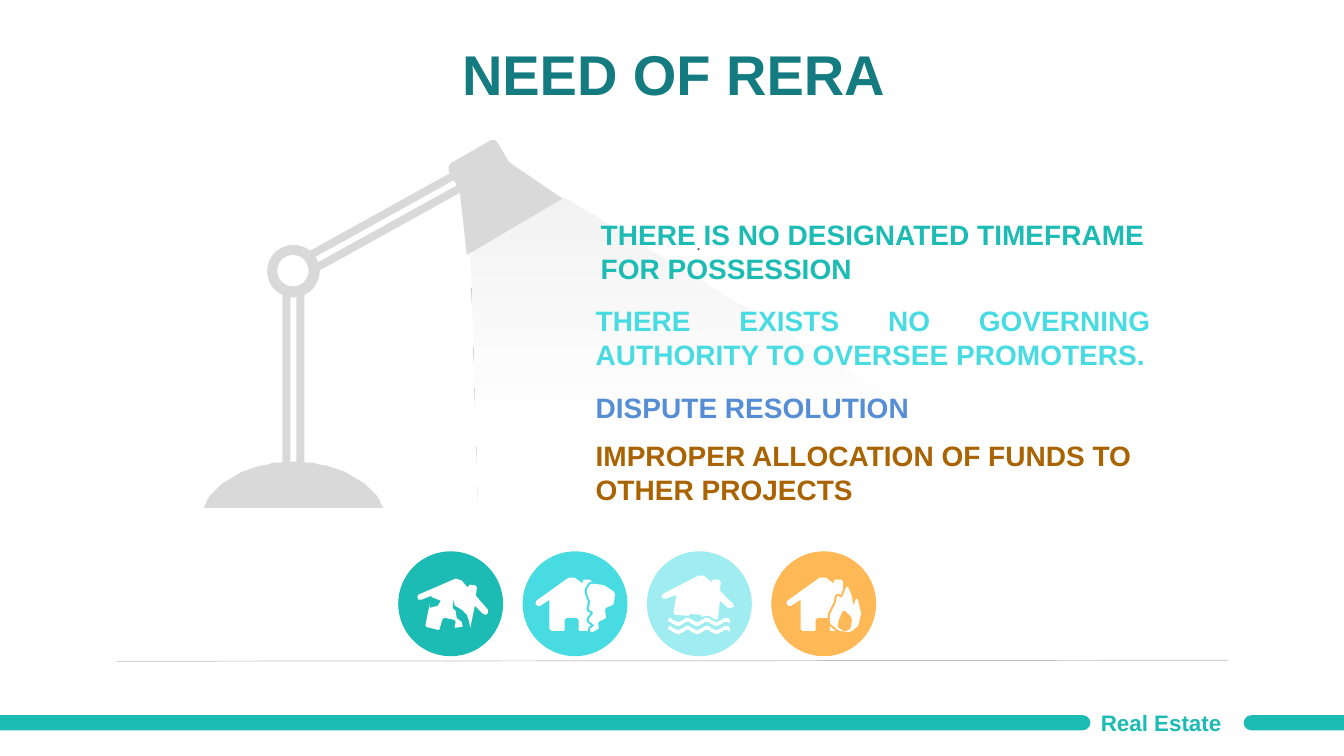
from math import asin, cos, pi, radians, sin

from lxml import etree
from pptx import Presentation
from pptx.dml.color import RGBColor
from pptx.enum.shapes import MSO_CONNECTOR, MSO_SHAPE as SHAPE
from pptx.enum.text import MSO_ANCHOR, PP_ALIGN as ALIGN
from pptx.oxml.ns import qn
from pptx.util import Inches, Pt

CELL = Inches(0.01)  # the slide is a grid of 1333 columns by 750 rows
COLUMNS, ROWS = 1333, 750

TEAL = RGBColor(0x1C, 0xBB, 0xB4)
DARK_TEAL = RGBColor(0x14, 0x7C, 0x81)
CYAN = RGBColor(0x48, 0xDC, 0xE2)
PALE_CYAN = RGBColor(0x9F, 0xED, 0xF0)
ORANGE = RGBColor(0xFE, 0xB8, 0x56)
BLUE = RGBColor(0x55, 0x8E, 0xD5)
BROWN = RGBColor(0xA9, 0x63, 0x01)
LAMP_GRAY = RGBColor(0xD9, 0xD9, 0xD9)
LINE_GRAY = RGBColor(0xBF, 0xBF, 0xBF)
TEXT_GRAY = RGBColor(0x40, 0x40, 0x40)
WHITE = RGBColor(0xFF, 0xFF, 0xFF)

ICON_SIZE, ICON_PITCH = 104, 123.33
ICON_LEFT, ICON_TOP = 395, 547

LIGHT_BEAM = [(467, 246), (475, 506), (1060, 501), (560, 196), (485, 228)]
LAMP_HEAD = [(447, 162), (487, 139), (491, 139), (494, 142), (505, 161), (558, 197),
             (463, 253), (456, 189), (445, 170), (445, 165)]

# Icon details, measured from the centre of the icon's circle
ROOF_CRACK = [(-20, -7), (-10, -3), (-13, 2), (-21, 4)]
WALL_CRACK = [(3, -4), (4, 2), (11, 6), (16, 11), (18, 17), (22, 36), (1, 36), (2, 24),
              (12, 23), (11, 18), (6, 14), (5, 7), (2, 4)]
TORNADO = [(11, -13), (15, -20), (28, -19), (40, -11), (39, 0), (29, 5), (31, 14), (23, 18),
           (24, 25), (16, 28), (14, 25), (20, 22), (13, 16), (18, 9), (13, 5), (15, -1)]
FLAME = [(23, -18), (28, -9), (29, 2), (33, -6), (37, 7), (35, 21), (27, 28), (15, 27),
         (6, 19), (6, 10), (12, 0), (13, -8), (18, -6)]
FLAME_CORE = [(20, 6), (28, 14), (27, 25), (21, 27), (14, 24), (15, 15)]


def rounded(points):
    """Cut each corner of a closed outline."""
    result = []
    for (x0, y0), (x1, y1) in zip(points, points[1:] + points[:1]):
        for t in (0.15, 0.85):
            result.append((x0 + t * (x1 - x0), y0 + t * (y1 - y0)))
    return result


def shifted(points, centre):
    return [(x + centre[0], y + centre[1]) for x, y in points]


def house_outline(apex, tilt=0, base=54, door=13):
    """Outline of a house, turned clockwise about its apex by `tilt` degrees."""
    left = [(-3, 1), (-35, 24), (-36, 27), (-34, 29), (-31, 29), (-22, 23), (-22, base - 2),
            (-20, base), (-8, base), (-7, base - 1), (-7, base - door + 2), (-5, base - door)]
    right = [(-x, y) for x, y in reversed(left)]
    chimney = [(20, 13), (20, 5), (18, 3), (12, 3), (11, 5), (11, 7)]
    c, s = cos(radians(tilt)), sin(radians(tilt))
    turned = [(x * c - y * s, x * s + y * c) for x, y in left + right[:-1] + chimney + right[-1:]]
    return shifted(turned, apex)


def wave_outline(left, right, middle, period=19, swing=2, thickness=4):
    columns = range(left, right + 1)
    crest = [(x, middle - swing * cos(2 * pi * (x - left) / period)) for x in columns]
    return (shifted(crest, (0, -thickness / 2))
            + shifted(reversed(crest), (0, thickness / 2)))


def dome_outline(centre, top, base, radius_x=92, radius_y=62, steps=36):
    """Top of an ellipse, cut flat at `base`."""
    start = asin((top + radius_y - base) / radius_y)
    angles = [start + (pi - 2 * start) * i / steps for i in range(steps + 1)]
    return [(centre + radius_x * cos(a), top + radius_y * (1 - sin(a))) for a in angles]


def paint(sp, color):
    sp.shadow.inherit = False
    sp.line.fill.background()
    sp.fill.solid()
    sp.fill.fore_color.rgb = color
    return sp


def add_preset(shapes, kind, box, color, rotation=0):
    sp = shapes.add_shape(kind, *(int(v * CELL) for v in box))
    sp.rotation = rotation
    return paint(sp, color)


def add_outline(shapes, points, color):
    builder = shapes.build_freeform(*points[0], scale=CELL)
    builder.add_line_segments(points[1:], close=True)
    return paint(builder.convert_to_shape(), color)


def add_rimmed_outline(shapes, points, color, rim_color):
    """Draw an outline set off from what lies behind it by a rim."""
    rim = add_outline(shapes, points, rim_color)
    rim.line.color.rgb, rim.line.width = rim_color, Pt(3)
    add_outline(shapes, points, color)


def fade_light(sp):
    """Fill with a gradient that goes from clear at the bottom to light gray."""
    gradient = etree.Element(qn("a:gradFill"), rotWithShape="1")
    stops = etree.SubElement(gradient, qn("a:gsLst"))
    for position, color, alpha in ((0, "FFFFFF", 20), (27, "FFFFFF", 80), (100, "F2F2F2", 100)):
        stop = etree.SubElement(stops, qn("a:gs"), pos=str(position * 1000))
        rgb = etree.SubElement(stop, qn("a:srgbClr"), val=color)
        etree.SubElement(rgb, qn("a:alpha"), val=str(alpha * 1000))
    etree.SubElement(gradient, qn("a:lin"), ang=str(270 * 60000), scaled="0")
    properties = sp._element.spPr
    properties.replace(properties.find(qn("a:solidFill")), gradient)


def add_text(shapes, box, text, size, color, bold=True, align=ALIGN.LEFT):
    tf = shapes.add_textbox(*(v * CELL for v in box)).text_frame
    tf.word_wrap = True
    tf.vertical_anchor = MSO_ANCHOR.MIDDLE
    p = tf.paragraphs[0]
    p.text = text
    p.alignment = align
    p.font.name, p.font.size, p.font.bold = "Arial", Pt(size), bold
    p.font.color.rgb = color
    return p


def add_ground_line(shapes):
    line = shapes.add_connector(MSO_CONNECTOR.STRAIGHT, *(v * CELL for v in (116, 656, 1218, 655)))
    line.line.color.rgb, line.line.width = LINE_GRAY, Pt(0.5)
    etree.SubElement(line._element.spPr, qn("a:effectLst"))


def add_footer(shapes):
    for box, rotation in (((533, 176, 15, 1082), 90), ((1276, 667, 15, 100), 270)):
        bar = add_preset(shapes, SHAPE.ROUND_2_SAME_RECTANGLE, box, TEAL, rotation)
        bar.adjustments[0], bar.adjustments[1] = 0.5, 0
    add_text(shapes, (1082, 698, 151, 37), "Real Estate", 16, TEAL, align=ALIGN.JUSTIFY)


def add_lamp(shapes):
    fade_light(add_outline(shapes, LIGHT_BEAM, WHITE))
    for left, top, rotation in ((368, 119, 61), (375, 131, 61), (280, 269, 0), (294, 268, 0)):
        add_preset(shapes, SHAPE.RECTANGLE, (left, top, 8, 197), LAMP_GRAY, rotation)
    add_preset(shapes, SHAPE.OVAL, (265, 243, 52, 52), LAMP_GRAY)
    add_preset(shapes, SHAPE.OVAL, (275, 253, 31, 31), WHITE)
    add_outline(shapes, dome_outline(centre=291, top=458, base=504), LAMP_GRAY)
    add_outline(shapes, LAMP_HEAD, LAMP_GRAY)


def add_icons(shapes):
    centres = []
    for i, color in enumerate((TEAL, CYAN, PALE_CYAN, ORANGE)):
        left = ICON_LEFT + i * ICON_PITCH
        add_preset(shapes, SHAPE.OVAL, (left, ICON_TOP, ICON_SIZE, ICON_SIZE), color)
        centres.append((left + ICON_SIZE / 2, ICON_TOP + ICON_SIZE / 2))
    quake, storm, flood, fire = centres

    houses = ((quake, (8, -25), 13, 54, 13), (storm, (-3, -27), 0, 54, 13),
              (flood, (2, -29), 8, 43, 3), (fire, (-1, -27), 0, 54, 13))
    for centre, apex, tilt, base, door in houses:
        house = house_outline(apex, tilt, base, door)
        add_outline(shapes, shifted(house, centre), WHITE)

    for crack in (ROOF_CRACK, WALL_CRACK):
        add_outline(shapes, shifted(crack, quake), TEAL)
    add_rimmed_outline(shapes, shifted(rounded(TORNADO), storm), WHITE, CYAN)
    for middle in (18, 26):
        wave = wave_outline(-31, 30, middle)
        add_rimmed_outline(shapes, shifted(wave, flood), WHITE, PALE_CYAN)
    add_rimmed_outline(shapes, shifted(rounded(FLAME), fire), WHITE, ORANGE)
    add_outline(shapes, shifted(rounded(FLAME_CORE), fire), ORANGE)


def add_needs(shapes):
    add_text(shapes, (681, 227, 560, 30), ".", 12, TEXT_GRAY, bold=False)
    for box, text, color, align in (
        ((586, 211, 560, 77), "THERE IS NO DESIGNATED TIMEFRAME FOR POSSESSION", TEAL, ALIGN.LEFT),
        ((581, 296, 570, 77), "THERE EXISTS NO GOVERNING AUTHORITY TO OVERSEE PROMOTERS.", CYAN, ALIGN.JUSTIFY),
        ((581, 382, 509, 44), "DISPUTE RESOLUTION", BLUE, ALIGN.LEFT),
        ((581, 430, 560, 77), "IMPROPER ALLOCATION OF FUNDS TO OTHER PROJECTS", BROWN, ALIGN.LEFT),
    ):
        add_text(shapes, box, text, 20, color, align=align)


def main():
    prs = Presentation()
    prs.slide_width, prs.slide_height = COLUMNS * CELL, ROWS * CELL
    shapes = prs.slides.add_slide(prs.slide_layouts[6]).shapes
    add_footer(shapes)
    title = add_text(shapes, (35, 37, 1266, 79), "NEED OF RERA", 40, DARK_TEAL, align=ALIGN.CENTER)
    title.line_spacing, title.space_before = 0.9, Pt(10)
    add_lamp(shapes)
    add_needs(shapes)
    add_ground_line(shapes)
    add_icons(shapes)
    prs.save("out.pptx")


if __name__ == "__main__":
    main()
